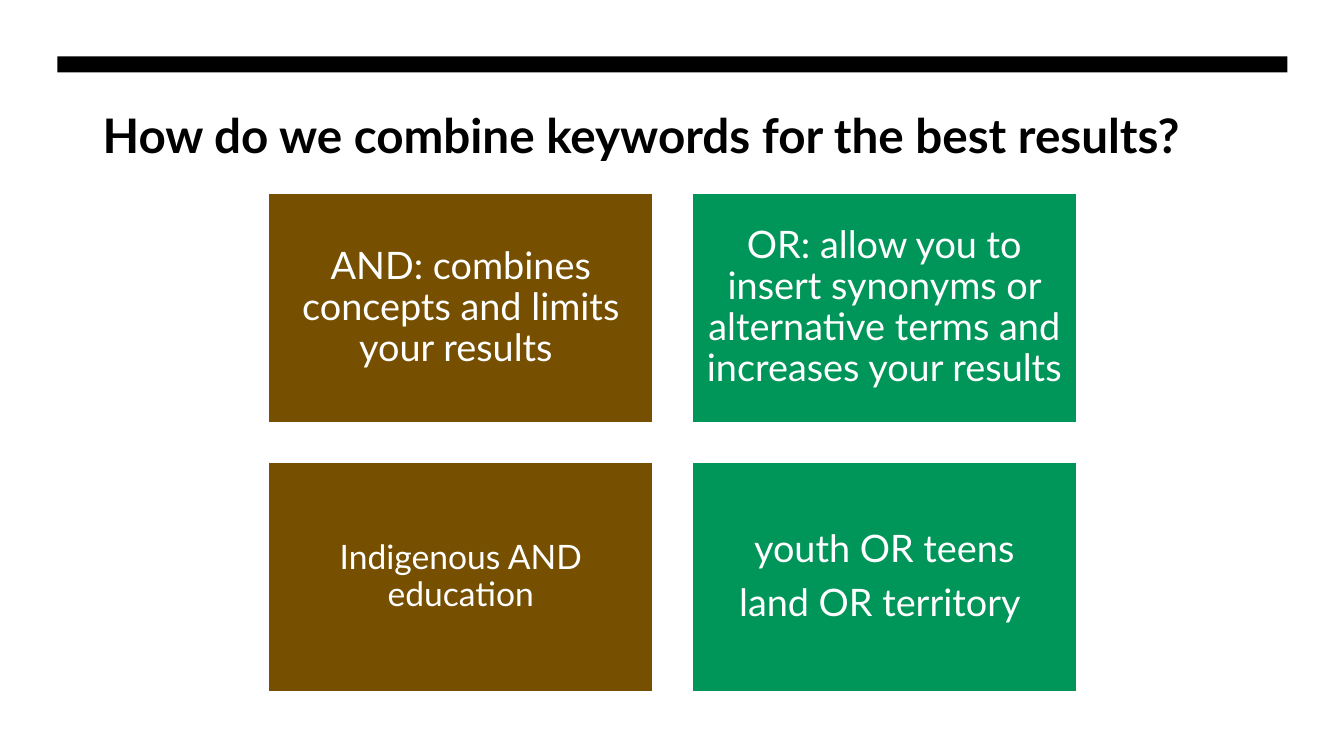
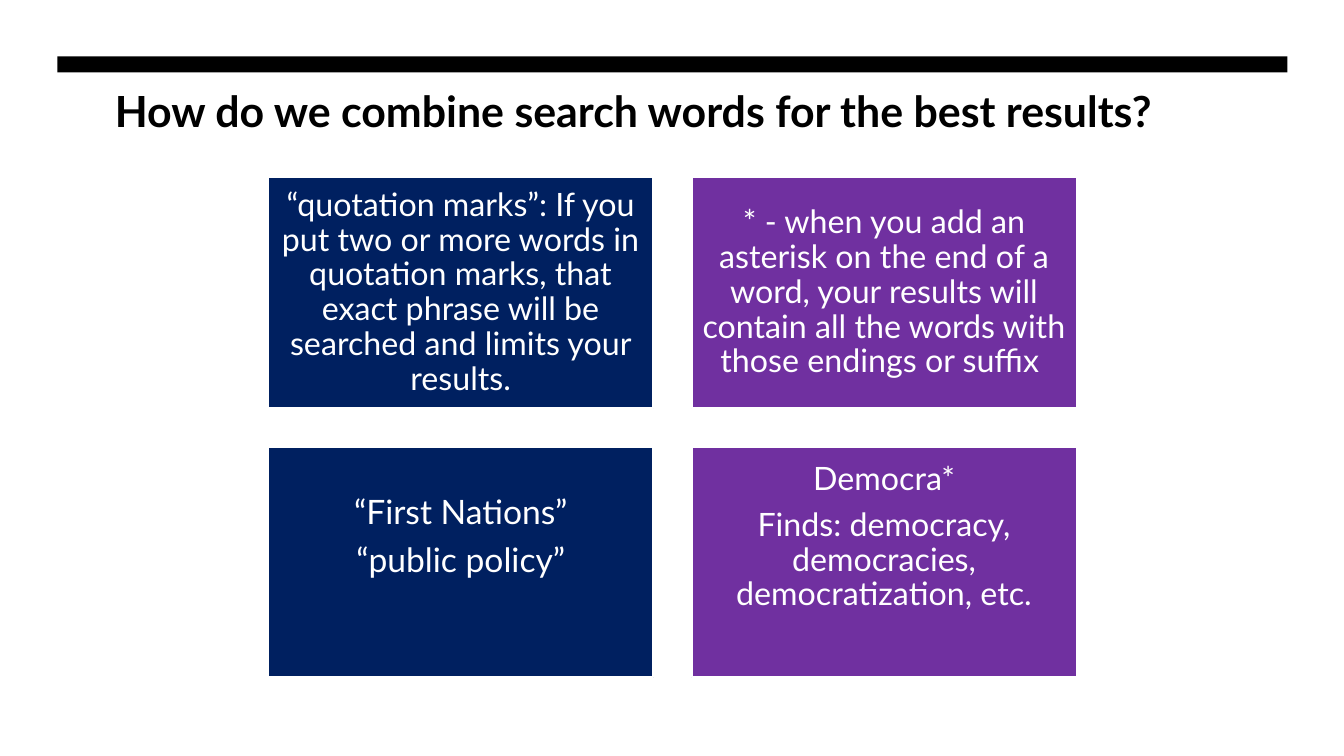
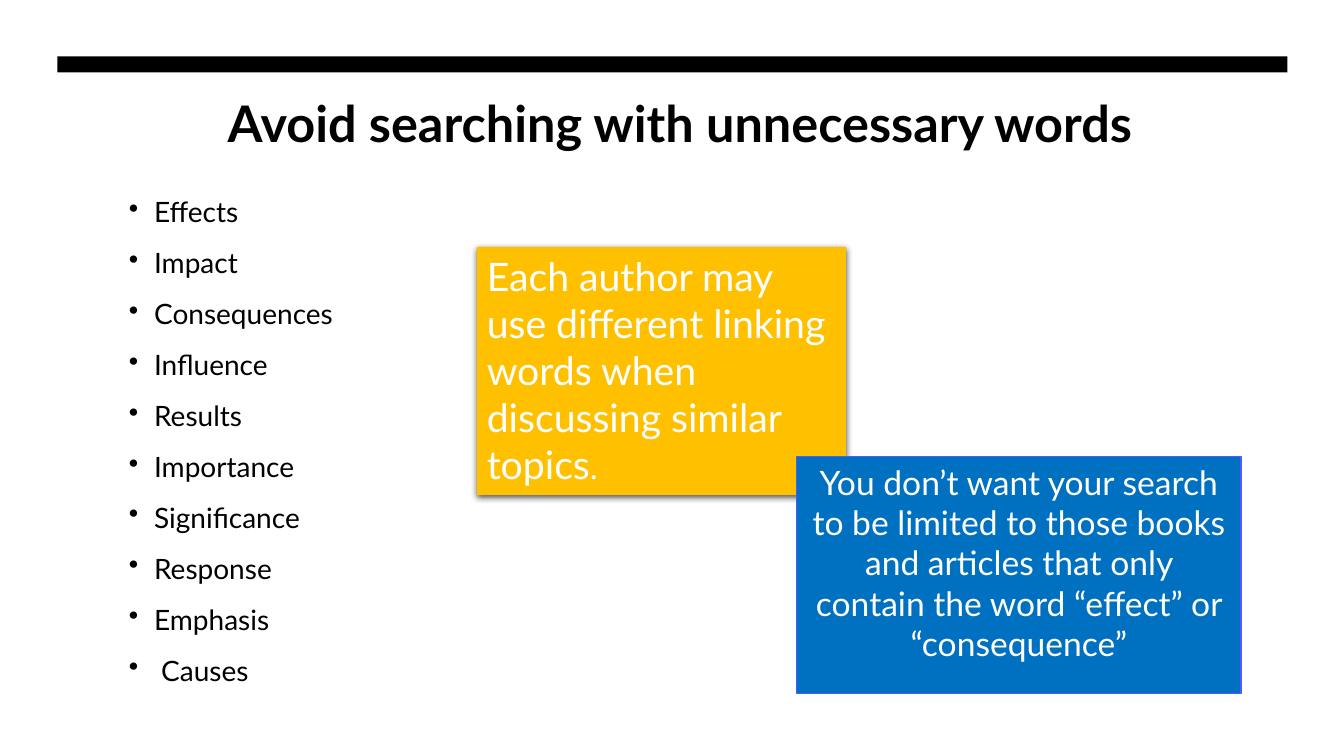
from lxml import etree
from pptx import Presentation
from pptx.dml.color import RGBColor
from pptx.enum.shapes import MSO_SHAPE as SHAPE
from pptx.enum.text import MSO_ANCHOR as ANCHOR, PP_ALIGN as ALIGN
from pptx.oxml import parse_xml
from pptx.oxml.ns import nsdecls, qn
from pptx.util import Inches, Pt

FONT = "Lato"
BLACK, WHITE = "000000", "FFFFFF"
BROWN, GREEN, NAVY, PURPLE = "765000", "009559", "002060", "7030A0"
YELLOW, BLUE, BLUE_EDGE = "FFC000", "0070C0", "4D5AFF"

# Card grid: two columns and two rows with equal gaps
CARD_W, CARD_H = 3.82, 2.29
CARD_LEFT, COL_STEP, ROW_STEP = 2.66, 4.2, 2.67
BLANK_LINE = 0.48


def rgb(color):
    return RGBColor.from_string(color)


def add_box(s, at, paras, size, color=WHITE, fill=None, line=None, line_w=1.5,
            bold=False, align=ALIGN.LEFT, anchor=ANCHOR.TOP):
    """Add a rectangle at (left, top, width, height) with one paragraph per string."""
    sp = s.shapes.add_shape(SHAPE.RECTANGLE, *map(Inches, at))
    sp.shadow.inherit = False
    if fill:
        sp.fill.solid()
        sp.fill.fore_color.rgb = rgb(fill)
    else:
        sp.fill.background()
    if line:
        sp.line.color.rgb = rgb(line)
        sp.line.width = Pt(line_w)
    else:
        sp.line.fill.background()
    tf = sp.text_frame
    tf.word_wrap = True
    tf.vertical_anchor = anchor
    tf.text = "\n".join(paras)
    for p in tf.paragraphs:
        p.alignment = align
        p.font.name, p.font.size, p.font.bold = FONT, Pt(size), bold
        p.font.color.rgb = rgb(color)
    return sp


prs = Presentation()
prs.slide_width, prs.slide_height = Inches(13.33), Inches(7.5)

# Title, its place, size, alignment and anchor
titles = [
    ("How do we combine keywords for the best results?",
     (0.92, 0.74, 11.49, 1.18), 34, ALIGN.LEFT, ANCHOR.MIDDLE),
    ("How do we combine search words for the best results?",
     (1.04, 0.5, 11.49, 1.18), 30.6, ALIGN.LEFT, ANCHOR.MIDDLE),
    ("Avoid searching with unnecessary words",
     (1.18, 0.86, 11.13, 1.08), 36, ALIGN.CENTER, ANCHOR.TOP),
]
slides = []
for title, at, size, align, anchor in titles:
    s = prs.slides.add_slide(prs.slide_layouts[6])
    add_box(s, (0.57, 0.56, 12.2, 0.16), [], 18, fill=BLACK)
    add_box(s, at, [title], size, BLACK, bold=True, align=align, anchor=anchor)
    slides.append(s)

# Cards row by row: paragraphs, text size, extra room below the text
boolean_cards = [
    (["AND: combines concepts and limits your results "], 27, 0),
    (["OR: allow you to insert synonyms or alternative terms and "
      "increases your results"], 27, 0),
    (["Indigenous AND education"], 24, 0),
    (["youth OR teens", "land OR territory "], 27, 0),
]
phrase_cards = [
    (["“quotation marks”: If you put two or more words in quotation marks, "
      "that exact phrase will be searched and limits your results."], 23, 0),
    (["* - when you add an asterisk on the end of a word, your results will "
      "contain all the words with those endings or suffix "], 23, 0),
    (["“First Nations”", "“public policy”"], 24, BLANK_LINE),
    (["Democra*", "Finds: democracy, democracies, democratization, etc."],
     23, BLANK_LINE),
]
card_slides = [
    (slides[0], 1.91, (BROWN, GREEN), boolean_cards),
    (slides[1], 1.76, (NAVY, PURPLE), phrase_cards),
]
for s, top, fills, cards in card_slides:
    for i, (paras, size, room) in enumerate(cards):
        row, col = divmod(i, 2)
        at = (CARD_LEFT + col * COL_STEP, top + row * ROW_STEP, CARD_W, CARD_H)
        sp = add_box(s, at, paras, size, fill=fills[col], line=WHITE,
                     align=ALIGN.CENTER, anchor=ANCHOR.MIDDLE)
        tf = sp.text_frame
        tf.margin_left = tf.margin_right = tf.margin_top = Inches(0.1)
        tf.margin_bottom = Inches(0.1 + room)
        for p in tf.paragraphs:
            p.line_spacing = 0.9
            p.space_after = Pt(round(0.35 * size, 1))

# Words to avoid, and two notes
s = slides[2]
words = ["Effects", "Impact", "Consequences", "Influence", "Results",
         "Importance", "Significance", "Response", "Emphasis", " Causes"]
sp = add_box(s, (1.18, 1.85, 7.1, 5.37), words, 20, BLACK)
for p in sp.text_frame.paragraphs:
    p.line_spacing = 1.1
    p.space_before = Pt(10)
    pPr = p._p.get_or_add_pPr()
    pPr.set("marL", str(Inches(0.25)))
    pPr.set("indent", str(-Inches(0.25)))
    bullet = etree.Element(qn("a:buChar"), char="•")
    pPr.find(qn("a:defRPr")).addprevious(bullet)

note = add_box(s, (4.73, 2.45, 3.66, 2.46),
               ["Each author may use different linking words when discussing "
                "similar topics"], 28, fill=YELLOW)
r = note.text_frame.paragraphs[0].add_run()
r.text = "."
r.font.size = Pt(24)
effects = note._element.spPr.find(qn("a:effectLst"))
effects.append(parse_xml(
    f'<a:outerShdw {nsdecls("a")} blurRad="{Pt(4.5)}" dist="{Pt(1.5)}" '
    f'dir="5400000" algn="ctr" rotWithShape="0"><a:srgbClr val="{BLACK}">'
    '<a:alpha val="63000"/></a:srgbClr></a:outerShdw>'))

add_box(s, (7.9, 4.53, 4.41, 2.35),
        ["You don’t want your search to be limited to those books and articles "
         "that only contain the word “effect” or “consequence”"],
        24, fill=BLUE, line=BLUE_EDGE, line_w=1, align=ALIGN.CENTER)

prs.save("out.pptx")
